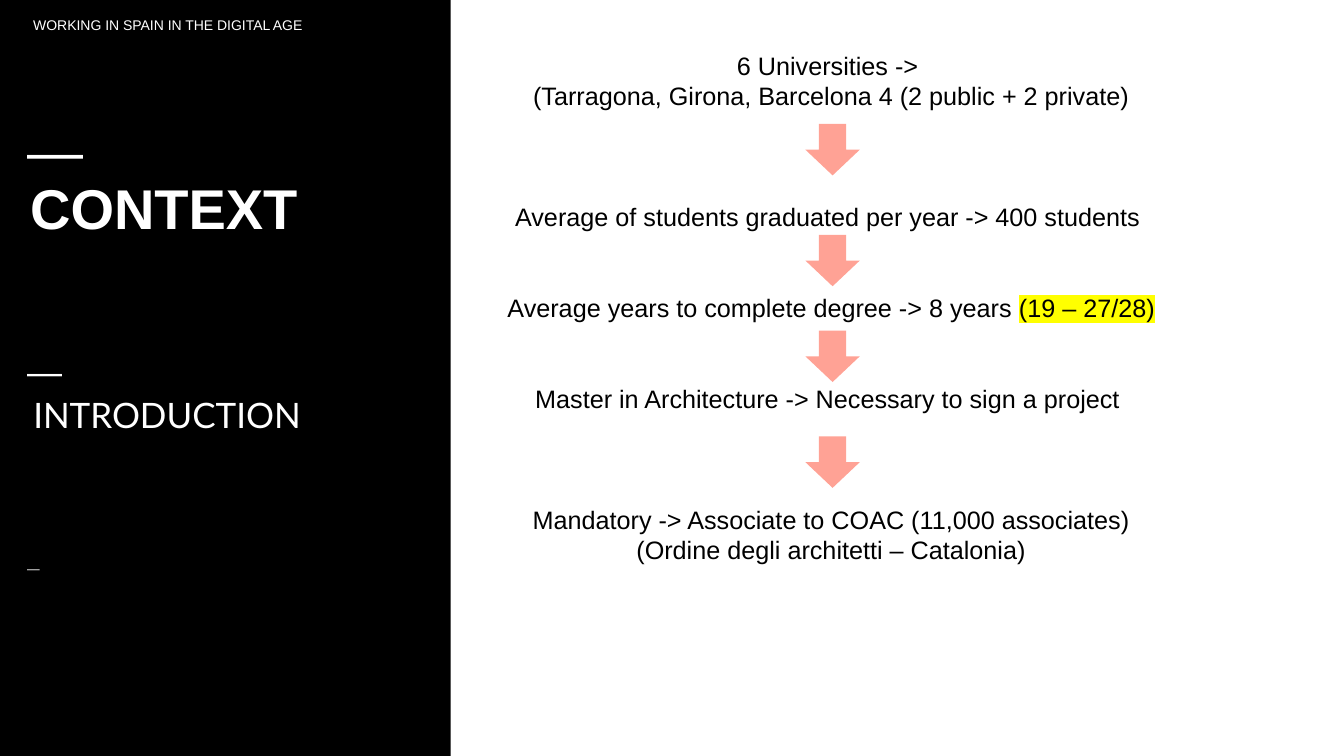
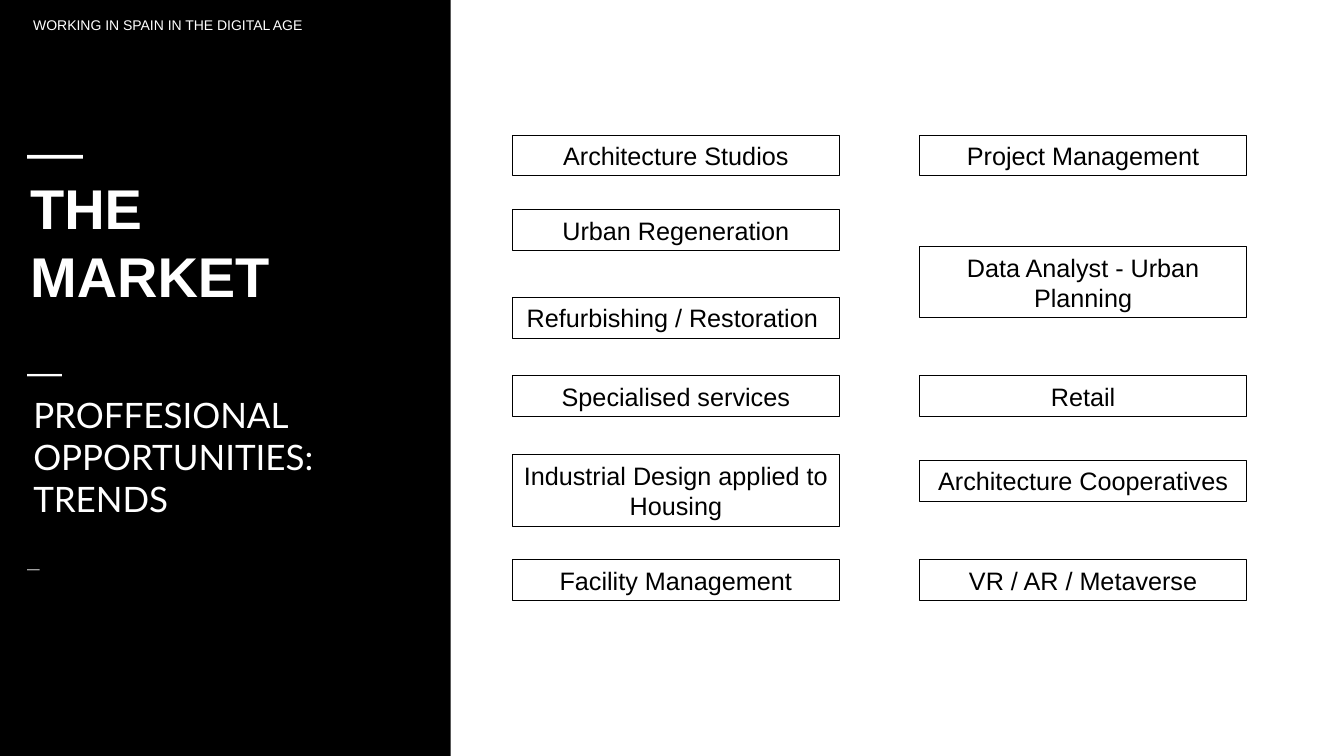
from pptx import Presentation
from pptx.dml.color import RGBColor
from pptx.enum.shapes import MSO_SHAPE
from pptx.enum.text import MSO_ANCHOR, PP_ALIGN
from pptx.oxml.ns import qn
from pptx.util import Inches, Pt
from lxml.etree import Element, SubElement

COLORS = {"black": "000000", "white": "FFFFFF", "arrow": "FFA295", "mark": "FFFF00"}
UNIT = 1 / 12  # grid of 160 columns by 90 rows, in inches
HEADER = "WORKING IN SPAIN IN THE DIGITAL AGE"


class Deck:
    """Shared style and the slide being built; places are (col, row, cols, rows)."""

    def __init__(self):
        self.prs = Presentation()
        self.prs.slide_width = self.grid(160)
        self.prs.slide_height = self.grid(90)
        self.s = None

    @staticmethod
    def grid(n):
        return Inches(n * UNIT)

    def place(self, at):
        return [self.grid(n) for n in at]

    def style_run(self, r, size, color, font="Arial", bold=False, tracking=0):
        r.font.size, r.font.name, r.font.bold = Pt(size), font, bold
        r.font.color.rgb = RGBColor.from_string(COLORS[color])
        if tracking:
            r._r.get_or_add_rPr().set("spc", str(int(tracking * 100)))

    def fill_text(self, tf, lines, size, color, inset, leading=None, align=PP_ALIGN.LEFT, **style):
        """Fill a text frame with one paragraph per line."""
        tf.word_wrap = True
        tf.margin_left = tf.margin_right = tf.margin_top = tf.margin_bottom = Inches(inset)
        for i, line in enumerate(lines):
            p = tf.paragraphs[0] if i == 0 else tf.add_paragraph()
            p.text = line
            p.alignment = align
            p.line_spacing = leading or Pt(size * 1.2)
            for r in p.runs:
                self.style_run(r, size, color, **style)

    def text(self, at, lines, size, color="white", inset=0.06, **style):
        sp = self.s.shapes.add_textbox(*self.place(at))
        self.fill_text(sp.text_frame, lines, size, color, inset, **style)
        return sp.text_frame

    def shape(self, kind, at, fill=None, line=None):
        sp = self.s.shapes.add_shape(kind, *self.place(at))
        sp.shadow.inherit = False
        if fill:
            sp.fill.solid()
            sp.fill.fore_color.rgb = RGBColor.from_string(COLORS[fill])
        else:
            sp.fill.background()
        if line:
            sp.line.color.rgb = RGBColor.from_string(COLORS[line])
            sp.line.width = Pt(0.75)
        else:
            sp.line.fill.background()
        return sp

    def dash(self, row, size, tracking):
        self.text((2.88, row, 33.5, size / 3), ["—"], size, inset=0.03,
                  leading=0.8, tracking=tracking)

    def slide(self, title, subtitle):
        """Start a slide with the black side band, dashes and headings."""
        self.s = self.prs.slides.add_slide(self.prs.slide_layouts[6])
        self.shape(MSO_SHAPE.RECTANGLE, (0, 0, 53.64, 90), fill="black")
        for row, size, tracking in ((14.88, 40, -1.6), (42.24, 25, -0.6), (66.72, 9, -0.6)):
            self.dash(row, size, tracking)
        self.text((2.88, 20, 43.5, 19), [title], 40, bold=True)
        self.text((3.24, 1.2, 48, 3.6), [HEADER], 10)
        self.text((3.24, 46.08, 39, 20), subtitle, 25, font="Lato")

    def highlight(self, p, text, size):
        """Add a marked run at the end of a paragraph."""
        r = p.add_run()
        r.text = text
        self.style_run(r, size, "black")
        mark = Element(qn("a:highlight"))
        SubElement(mark, qn("a:srgbClr")).set("val", COLORS["mark"])
        r._r.get_or_add_rPr().find(qn("a:solidFill")).addnext(mark)

    def arrow(self, row):
        self.shape(MSO_SHAPE.DOWN_ARROW, (95.88, row, 6.48, 6.12), fill="arrow")

    def box(self, col, center, label, lines=1):
        rows = 1.2 + 3.65 * lines
        sp = self.shape(MSO_SHAPE.RECTANGLE, (col, center - rows / 2, 39, rows), line="black")
        sp.text_frame.vertical_anchor = MSO_ANCHOR.MIDDLE
        self.fill_text(sp.text_frame, [label], 18, "black", 0.05, align=PP_ALIGN.CENTER)
        sp.text_frame.margin_left = sp.text_frame.margin_right = Inches(0.1)


def context_slide(deck):
    deck.slide("CONTEXT", ["INTRODUCTION"])
    # Steps, each with the number of free lines above it
    steps = [
        (0, "6 Universities -> "),
        (0, "(Tarragona, Girona, Barcelona 4 (2 public + 2 private)"),
        (3, "Average of students graduated per year -> 400 students "),
        (2, "Average years to complete degree -> 8 years "),
        (2, "Master in Architecture -> Necessary to sign a project "),
        (3, "Mandatory -> Associate to COAC (11,000 associates)"),
        (0, "(Ordine degli architetti – Catalonia)"),
    ]
    tf = deck.text((50.88, 5.4, 96.12, 66.6), [step for _, step in steps], 18, "black",
                   inset=0.05, align=PP_ALIGN.CENTER)
    for p, (gap, _) in zip(tf.paragraphs, steps):
        if gap:
            p.space_before = Pt(gap * 21.6)
    deck.highlight(tf.paragraphs[3], "(19 – 27/28)", 18)
    # Arrows between the steps
    for row in (14.76, 27.96, 39.36, 51.96):
        deck.arrow(row)


def market_slide(deck):
    deck.slide("THE MARKET", ["PROFFESIONAL OPPORTUNITIES:", "TRENDS"])
    # Two columns of trends: middle row, label, number of lines
    columns = {
        60.96: [
            (18.5, "Architecture Studios", 1),
            (27.38, "Urban Regeneration", 1),
            (37.82, "Refurbishing / Restoration ", 1),
            (47.18, "Specialised services", 1),
            (58.38, "Industrial Design applied to Housing", 2),
            (69.05, "Facility Management", 1),
        ],
        109.44: [
            (18.5, "Project Management", 1),
            (33.6, "Data Analyst - Urban Planning", 2),
            (47.18, "Retail", 1),
            (57.24, "Architecture Cooperatives", 1),
            (69.05, "VR / AR / Metaverse", 1),
        ],
    }
    for col, trends in columns.items():
        for center, label, lines in trends:
            deck.box(col, center, label, lines)


def main():
    deck = Deck()
    context_slide(deck)
    market_slide(deck)
    deck.prs.save("out.pptx")


if __name__ == "__main__":
    main()
